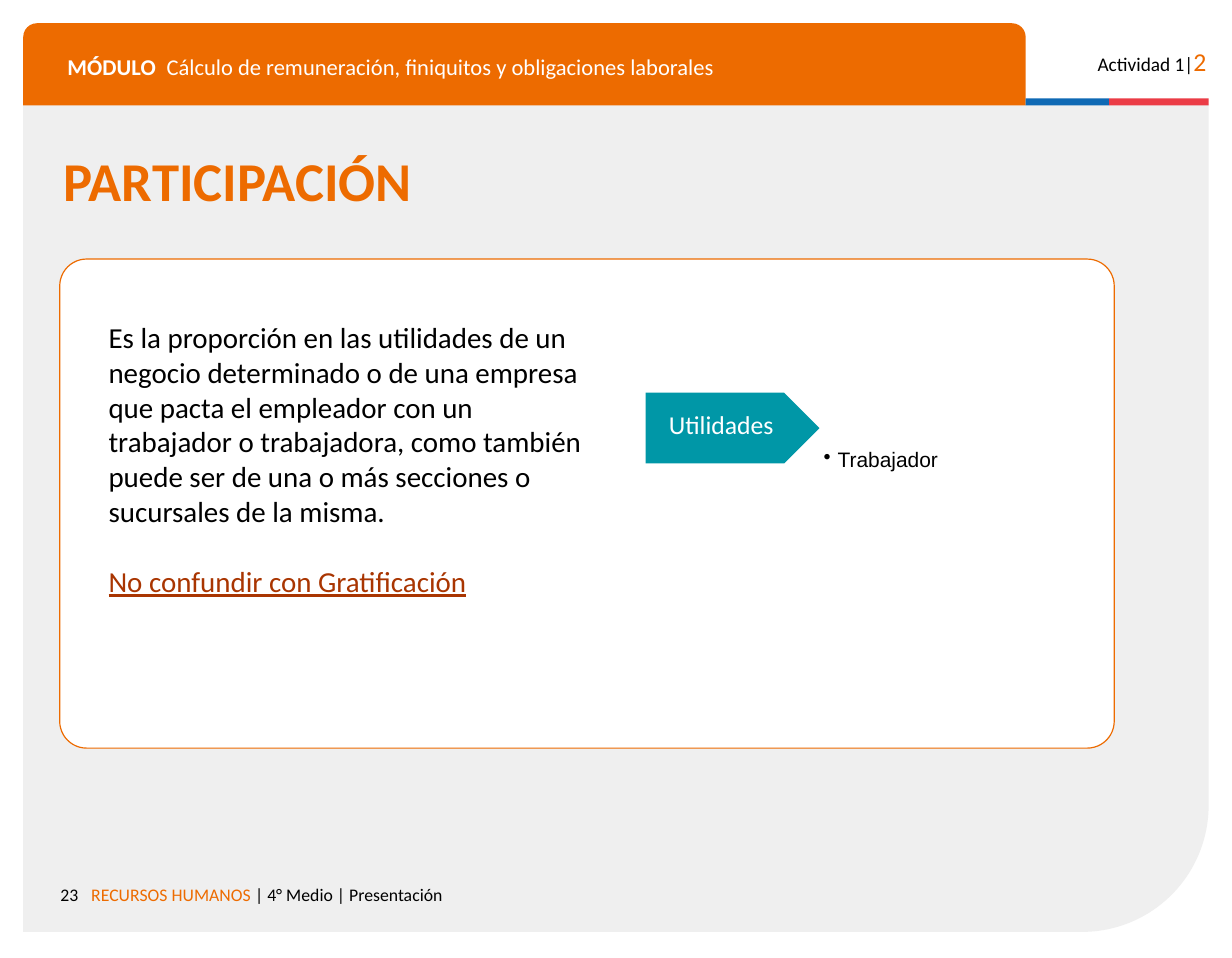
from lxml.etree import SubElement
from pptx import Presentation
from pptx.dml.color import RGBColor
from pptx.enum.shapes import MSO_SHAPE as Shape
from pptx.enum.text import MSO_ANCHOR as Anchor, PP_ALIGN as Align
from pptx.oxml.ns import qn
from pptx.util import Cm, Pt

ORANGE, BLACK, WHITE, RUST = "ED6B00", "000000", "FFFFFF", "A93501"

# Content: each paragraph is a list of (text, size, colour)
TITLE = [[("PARTICIPACIÓN", 34, ORANGE)]]
MODULE_LABEL = [[("MÓDULO", 14, WHITE)]]
MODULE_NAME = [[("Cálculo de remuneración, finiquitos y obligaciones laborales", 14, WHITE)]]
ACTIVITY = [[("Actividad 1|", 12, BLACK), ("2", 16, ORANGE)]]
PAGE_NUMBER = [[("23", 11, BLACK)]]
FOOTER = [[("RECURSOS HUMANOS ", 11, ORANGE), ("| 4° Medio | Presentación", 11, BLACK)]]
DEFINITION = [
    [("Es la proporción en las utilidades de un negocio determinado o de una empresa "
      "que pacta el empleador con un trabajador o trabajadora, como también puede ser "
      "de una o más secciones o sucursales de la misma.", 18, BLACK)],
    [("No confundir con Gratificación", 18, RUST)],
]
PROFITS = [[("Utilidades", 16, WHITE)]]
WORKER = [[("Trabajador", 13, BLACK)]]


def color(value):
    return RGBColor.from_string(value)


def add_block(kind, left, top, width, height, fill, line=None):
    block = page.shapes.add_shape(kind, Cm(left), Cm(top), Cm(width), Cm(height))
    block.shadow.inherit = False
    block.fill.solid()
    block.fill.fore_color.rgb = color(fill)
    if line:
        block.line.color.rgb = color(line)
        block.line.width = Pt(0.75)
    else:
        block.line.fill.background()
    return block


def write(box, paragraphs, align=Align.LEFT, bold=False, anchor=Anchor.TOP, font="Calibri"):
    frame = box.text_frame
    frame.word_wrap = True
    frame.vertical_anchor = anchor
    frame.margin_left = frame.margin_right = Cm(0.25)
    frame.margin_top = frame.margin_bottom = Cm(0.13)
    for index, spans in enumerate(paragraphs):
        para = frame.add_paragraph() if index else frame.paragraphs[0]
        para.alignment = align
        para.font.name, para.font.bold = font, bold
        for text, size, shade in spans:
            span = para.add_run()
            span.text = text
            span.font.size = Pt(size)
            span.font.color.rgb = color(shade)
    return frame


def add_text(left, top, width, height, paragraphs, **style):
    box = page.shapes.add_textbox(Cm(left), Cm(top), Cm(width), Cm(height))
    return write(box, paragraphs, **style)


deck = Presentation()
deck.slide_width, deck.slide_height = Cm(27), Cm(21)
page = deck.slides.add_slide(deck.slide_layouts[5])

# Background panel, rounded at the bottom right
panel = add_block(Shape.ROUND_1_RECTANGLE, 0.51, 2.29, 25.98, 18.14, "EFEFEF")
panel.adjustments[0] = 0.153
panel._element.spPr.xfrm.set("flipV", "1")

# Header band and stripes
add_block(Shape.ROUND_2_SAME_RECTANGLE, 0.51, 0.51, 21.97, 1.8, ORANGE)
add_block(Shape.RECTANGLE, 22.48, 2.16, 1.83, 0.15, "0F69B4")
add_block(Shape.RECTANGLE, 24.31, 2.16, 2.18, 0.15, "EB3C46")
add_text(1.23, 1.04, 2.5, 0.9, MODULE_LABEL, bold=True)
add_text(3.4, 1.04, 18, 0.9, MODULE_NAME)
add_text(23.44, 0.87, 3.25, 0.97, ACTIVITY, align=Align.RIGHT)

# Title, in front of the panel
title = page.shapes.title
title.left, title.top, title.width, title.height = Cm(1.14), Cm(3.09), Cm(25.12), Cm(1.75)
write(title, TITLE, bold=True)
page.shapes._spTree.append(title._element)

# Card with the definition
card = add_block(Shape.ROUNDED_RECTANGLE, 1.31, 5.68, 23.11, 10.72, WHITE, ORANGE)
card.adjustments[0] = 0.055
definition = add_text(2.13, 6.88, 11.07, 6.5, DEFINITION)
warning = definition.paragraphs[1]
warning.space_before = Pt(22)
warning.runs[0].font.underline = True

# Profits arrow and who receives them
arrow = add_block(Shape.PENTAGON, 14.15, 8.61, 3.81, 1.55, "0097A7")
profits = write(arrow, PROFITS, anchor=Anchor.MIDDLE)
profits.margin_left, profits.margin_bottom = Cm(0.51), Cm(0.28)
worker = add_text(17.8, 9.67, 4.5, 0.8, WORKER, font="Arial")
bullet_format = worker.paragraphs[0]._p.get_or_add_pPr()
bullet_format.set("marL", str(Cm(0.31)))
bullet_format.set("indent", str(-Cm(0.31)))
bullet = SubElement(bullet_format, qn("a:buChar"), char="•")
bullet_format.insert(0, bullet)

# Footer
add_text(0.5, 19.24, 1.47, 0.74, PAGE_NUMBER, align=Align.RIGHT)
add_text(1.75, 19.24, 18, 0.74, FOOTER)

deck.save("out.pptx")
